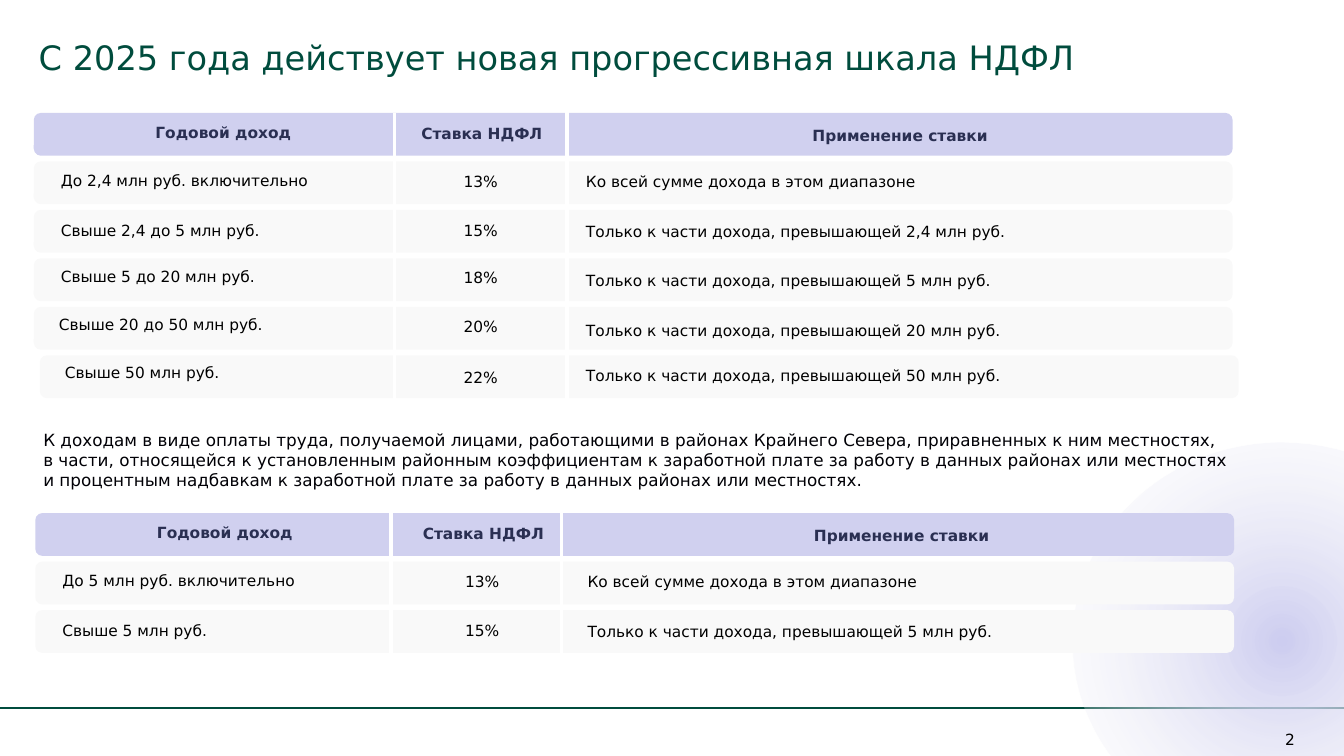
"""Build the slide on the progressive income tax scale."""
from pptx import Presentation
from pptx.dml.color import RGBColor
from pptx.enum.shapes import MSO_CONNECTOR, MSO_SHAPE
from pptx.enum.text import MSO_AUTO_SIZE, PP_ALIGN
from pptx.oxml import parse_xml
from pptx.oxml.ns import nsdecls
from pptx.oxml.xmlchemy import OxmlElement
from pptx.util import Inches, Pt

STRAIGHT = MSO_CONNECTOR.STRAIGHT
ROUNDED, OVAL = MSO_SHAPE.ROUNDED_RECTANGLE, MSO_SHAPE.OVAL
GROW = MSO_AUTO_SIZE.SHAPE_TO_FIT_TEXT
LEFT, CENTER = PP_ALIGN.LEFT, PP_ALIGN.CENTER

GREEN = RGBColor(0x00, 0x4C, 0x3D)
NAVY = RGBColor(0x2A, 0x2F, 0x52)
BLACK = RGBColor(0x00, 0x00, 0x00)
INK = RGBColor(0x01, 0x00, 0x06)
WHITE = RGBColor(0xFF, 0xFF, 0xFF)
LILAC = RGBColor(0xD0, 0xD0, 0xEF)
PALE = RGBColor(0xF9, 0xF9, 0xF9)
GLOW = RGBColor(0xCE, 0xCE, 0xF1)

BAR_LEFT, BAR_TOP, BAR_WIDTH, BAR_HEIGHT, BAR_PITCH = 0.67, 2.24, 23.79, 0.85, 0.962
LAST_BAR_SHIFT = 0.12
CELL_HEIGHT = 0.4
HEADINGS = [
    ("Годовой доход", 0.84, 2.47, 7.18),
    ("Ставка НДФЛ", 5.97, 2.49, 7.18),
    ("Применение ставки", 11.09, 2.52, 13.54),
]
INCOME_LEFTS = [1.11, 1.11, 1.11, 1.07, 1.19]
INCOME_TOPS = [3.42, 4.4, 5.33, 6.27, 7.23]
RATE_TOPS = [3.44, 4.4, 5.35, 6.32, 7.32]
USAGE_TOPS = [3.44, 4.43, 5.41, 6.39, 7.28]

WHOLE = "Ко всей сумме дохода в этом диапазоне"
EXCESS = "Только к части дохода, превышающей {} млн руб."
GENERAL_SCALE = [
    ("До 2,4 млн руб. включительно", "13%", WHOLE),
    ("Свыше 2,4 до 5 млн руб.", "15%", EXCESS.format("2,4")),
    ("Свыше 5 до 20 млн руб.", "18%", EXCESS.format("5")),
    ("Свыше 20 до 50 млн руб.", "20%", EXCESS.format("20")),
    ("Свыше 50 млн руб.", "22%", EXCESS.format("50")),
]
NORTHERN_SCALE = [
    ("До 5 млн руб. включительно", "13%", WHOLE),
    ("Свыше 5 млн руб.", "15%", EXCESS.format("5")),
]
NORTHERN_NOTE = (
    "К доходам в виде оплаты труда, получаемой лицами, работающими в районах "
    "Крайнего Севера, приравненных к ним местностях, \v"
    "в части, относящейся к установленным районным коэффициентам к заработной плате "
    "за работу в данных районах или местностях \v"
    "и процентным надбавкам к заработной плате за работу в данных районах или местностях."
)


class SlideBuilder:
    """Hold the text style and the current slide."""

    def __init__(self, slide, font="DejaVu Sans", size=22):
        """Remember the slide and the default type."""
        self.slide, self.font, self.size = slide, font, size

    def line(self, start, end, color, width):
        """Draw a straight line."""
        connector = self.slide.shapes.add_connector(STRAIGHT, *map(Inches, start + end))
        connector.line.color.rgb = color
        connector.line.width = Pt(width)
        connector._element.spPr.append(OxmlElement("a:effectLst"))

    def bar(self, left, top, color):
        """Draw the rounded band behind one row."""
        band = self.slide.shapes.add_shape(
            ROUNDED, *map(Inches, (left, top, BAR_WIDTH, BAR_HEIGHT)))
        band.shadow.inherit = False
        band.fill.solid()
        band.fill.fore_color.rgb = color
        band.line.fill.background()

    def glow(self, left, top, width, height):
        """Draw an ellipse that fades out from its centre."""
        ellipse = self.slide.shapes.add_shape(OVAL, *map(Inches, (left, top, width, height)))
        ellipse.shadow.inherit = False
        ellipse.line.fill.background()
        ellipse._element.spPr.insert(2, parse_xml(
            f'<a:gradFill {nsdecls("a")} rotWithShape="1"><a:gsLst>'
            f'<a:gs pos="0"><a:srgbClr val="{GLOW}"/></a:gs>'
            f'<a:gs pos="100000"><a:srgbClr val="{PALE}"><a:alpha val="0"/></a:srgbClr></a:gs>'
            '</a:gsLst><a:path path="circle">'
            '<a:fillToRect l="50000" t="50000" r="50000" b="50000"/></a:path></a:gradFill>'))

    def text(self, words, left, top, width, height=CELL_HEIGHT, size=None, color=BLACK,
             bold=False, align=LEFT, spacing=0.8, wrap=True, inset=None):
        """Place one paragraph of text."""
        frame = self.slide.shapes.add_textbox(
            *map(Inches, (left, top, width, height))).text_frame
        frame.word_wrap = wrap
        frame.auto_size = GROW
        if inset is not None:
            frame.margin_left = frame.margin_right = Inches(inset)
            frame.margin_top = frame.margin_bottom = Inches(inset)
        paragraph = frame.paragraphs[0]
        paragraph.text = words
        paragraph.alignment = align
        paragraph.line_spacing = spacing
        for run in paragraph.runs:
            run.font.name = self.font
            run.font.size = Pt(size or self.size)
            run.font.bold = bold
            run.font.color.rgb = color

    def scale(self, rows, dividers, dx=0, dy=0):
        """Draw a tax scale: bands, column dividers and cell texts."""
        for index in range(len(rows) + 1):
            shift = LAST_BAR_SHIFT if index == len(GENERAL_SCALE) else 0
            self.bar(BAR_LEFT + dx + shift, BAR_TOP + dy + index * BAR_PITCH,
                     PALE if index else LILAC)
        for x, top, bottom in dividers:
            self.line((x, bottom), (x, top), WHITE, 4.5)
        for heading, left, top, width in HEADINGS:
            self.text(heading, left + dx, top + dy, width,
                      color=NAVY, bold=True, align=CENTER)
        for index, (income, rate, usage) in enumerate(rows):
            self.text(income, INCOME_LEFTS[index] + dx, INCOME_TOPS[index] + dy, 6.53)
            self.text(rate, 7.86 + dx, RATE_TOPS[index] + dy, 3.36, align=CENTER)
            self.text(usage, 11.53 + dx, USAGE_TOPS[index] + dy, 12.78)


def main():
    """Compose and save the slide."""
    deck = Presentation()
    deck.slide_width, deck.slide_height = Inches(26.67), Inches(15)
    builder = SlideBuilder(deck.slides.add_slide(deck.slide_layouts[6]))
    builder.line((0, 14.05), (26.67, 14.05), GREEN, 2)
    builder.glow(21.29, 8.79, 8.31, 7.86)
    builder.text("2", 25.44, 14.42, 0.32, 0.49, align=CENTER, spacing=1.0,
                 wrap=False, inset=0.06)
    builder.text("С 2025 года действует новая прогрессивная шкала НДФЛ",
                 0.67, 0.84, 24.35, 0.75, size=48, color=GREEN)
    builder.scale(GENERAL_SCALE, [(7.83, 2.24, 8.2), (11.25, 2.14, 8.22)])
    builder.text(NORTHERN_NOTE, 0.76, 8.47, 24.18, 1.31, size=24, color=INK, spacing=1.0)
    builder.scale(NORTHERN_SCALE, [(7.76, 9.96, 13.36), (11.15, 9.5, 13.18)],
                  dx=0.03, dy=7.94)
    deck.save("out.pptx")


if __name__ == "__main__":
    main()
